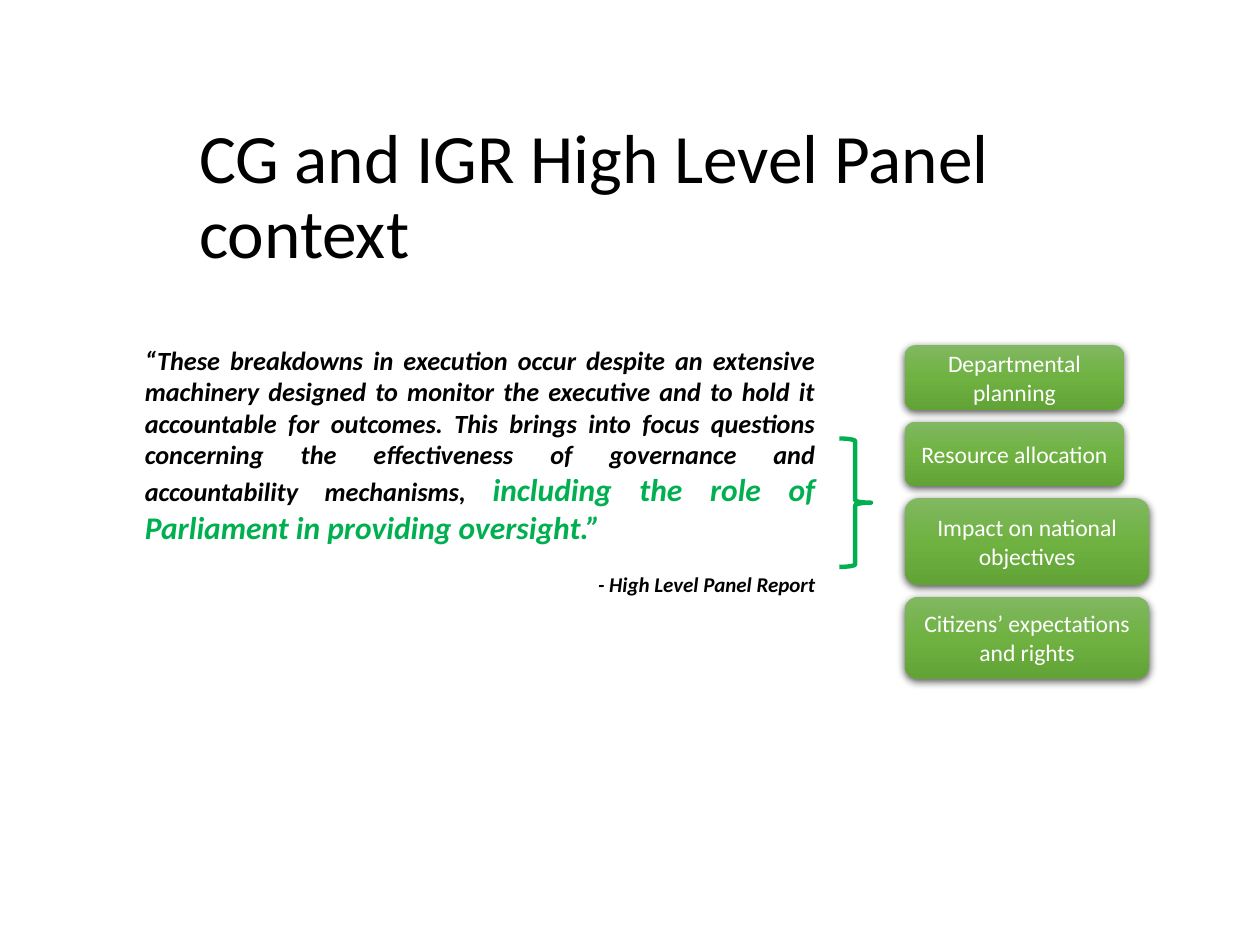
"""Build the High Level Panel context slide with a quote and four linked themes."""
from copy import deepcopy
from dataclasses import dataclass

from lxml import etree
from pptx import Presentation
from pptx.dml.color import RGBColor
from pptx.enum.shapes import MSO_SHAPE
from pptx.enum.text import MSO_ANCHOR, MSO_AUTO_SIZE, PP_ALIGN
from pptx.oxml.ns import qn
from pptx.util import Cm, Pt

ROUNDED = MSO_SHAPE.ROUNDED_RECTANGLE
BRACE = MSO_SHAPE.RIGHT_BRACE
MIDDLE = MSO_ANCHOR.MIDDLE
NO_AUTOFIT = MSO_AUTO_SIZE.NONE
LEFT, CENTER, RIGHT, JUSTIFY = PP_ALIGN.LEFT, PP_ALIGN.CENTER, PP_ALIGN.RIGHT, PP_ALIGN.JUSTIFY

FONT = "Calibri"
BLACK, WHITE, GREEN = "000000", "FFFFFF", "00B050"
THEME_GRADIENT = ((0, "81B861"), (0.5, "6FB242"), (1, "62A336"))
THEME_LEFT, THEME_TOP, THEME_GAP = 18.24, 6.96, 0.24


@dataclass
class Theme:
    """A theme label and the size of its box in centimetres."""
    label: str
    width: float
    height: float


THEMES = (
    Theme("Departmental planning", 4.42, 1.3),
    Theme("Resource allocation", 4.42, 1.3),
    Theme("Impact on national objectives", 4.93, 1.75),
    Theme("Citizens’ expectations and rights", 4.93, 1.65),
)


def color(hex_value: str) -> RGBColor:
    """Turn a hex string into a colour."""
    return RGBColor.from_string(hex_value)


def style_run(run, size: float, hex_value: str, emphasis: bool = False) -> None:
    """Set the font of one run, bold and italic when emphasised."""
    run.font.name = FONT
    run.font.size = Pt(size)
    run.font.color.rgb = color(hex_value)
    run.font.bold = run.font.italic = emphasis


def fill_gradient(shape) -> None:
    """Fill a shape with the three-stop green gradient from top to bottom."""
    shape.fill.gradient()
    shape.fill.gradient_angle = 270
    stop_list = shape.fill._xPr.find(qn("a:gradFill")).find(qn("a:gsLst"))
    stop_list.append(deepcopy(stop_list[-1]))
    for stop, (position, hex_value) in zip(shape.fill.gradient_stops, THEME_GRADIENT):
        stop.position = position
        stop.color.rgb = color(hex_value)


def add_shadow(shape) -> None:
    """Give a shape a soft shadow below it."""
    shape.shadow.inherit = False
    effects = shape._element.spPr.find(qn("a:effectLst"))
    shadow = etree.SubElement(
        effects, qn("a:outerShdw"), blurRad=str(Pt(4.5)), dist=str(Pt(1.5)),
        dir="5400000", algn="ctr", rotWithShape="0")
    tone = etree.SubElement(shadow, qn("a:srgbClr"), val=BLACK)
    etree.SubElement(tone, qn("a:alpha"), val="63000")


def add_theme(slide, theme: Theme, top: float) -> None:
    """Draw one theme box."""
    box = slide.shapes.add_shape(
        ROUNDED, Cm(THEME_LEFT), Cm(top), Cm(theme.width), Cm(theme.height))
    fill_gradient(box)
    box.line.fill.background()
    add_shadow(box)
    frame = box.text_frame
    frame.text = theme.label
    frame.word_wrap = True
    frame.vertical_anchor = MIDDLE
    frame.paragraphs[0].alignment = CENTER
    style_run(frame.paragraphs[0].runs[0], 13.5, WHITE)


def add_title(slide) -> None:
    """Place and format the slide title."""
    title = slide.shapes.title
    title.left, title.top, title.width, title.height = Cm(3.76), Cm(2.62), Cm(17.53), Cm(2.77)
    frame = title.text_frame
    frame.text = "CG and IGR High Level Panel context"
    frame.auto_size = NO_AUTOFIT
    frame.vertical_anchor = MIDDLE
    heading = frame.paragraphs[0]
    heading.alignment = LEFT
    heading.line_spacing = 0.9
    style_run(heading.runs[0], 39.6, BLACK)


def add_quote(slide) -> None:
    """Write the quotation and its attribution."""
    frame = slide.shapes.add_textbox(Cm(2.67), Cm(6.81), Cm(14.02), Cm(6.02)).text_frame
    frame.word_wrap = True
    quote = frame.paragraphs[0]
    quote.text = (
        "“These breakdowns in execution occur despite an extensive machinery designed "
        "to monitor the executive and to hold it accountable for outcomes. This brings "
        "into focus questions concerning the effectiveness of governance and "
        "accountability mechanisms, ")
    quote.alignment = JUSTIFY
    style_run(quote.runs[0], 15, BLACK, emphasis=True)
    oversight = quote.add_run()
    oversight.text = "including the role of Parliament in providing oversight.”"
    style_run(oversight, 18, GREEN, emphasis=True)
    attribution = frame.add_paragraph()
    attribution.text = "- High Level Panel Report"
    attribution.alignment = RIGHT
    attribution.space_before = Pt(14.6)
    style_run(attribution.runs[0], 12, BLACK, emphasis=True)


def add_brace(slide) -> None:
    """Draw the brace that links the quotation to the themes."""
    brace = slide.shapes.add_shape(BRACE, Cm(16.92), Cm(8.84), Cm(0.64), Cm(2.59))
    brace.shadow.inherit = False
    brace.fill.background()
    brace.line.color.rgb = color(GREEN)
    brace.line.width = Pt(2.5)


def main() -> None:
    """Build and save the slide."""
    deck = Presentation()
    deck.slide_width, deck.slide_height = Cm(25.4), Cm(19.05)
    slide = deck.slides.add_slide(deck.slide_layouts.get_by_name("Title Only"))
    add_title(slide)
    top = THEME_TOP
    for theme in THEMES:
        add_theme(slide, theme, top)
        top += theme.height + THEME_GAP
    add_quote(slide)
    add_brace(slide)
    deck.save("out.pptx")


if __name__ == "__main__":
    main()
